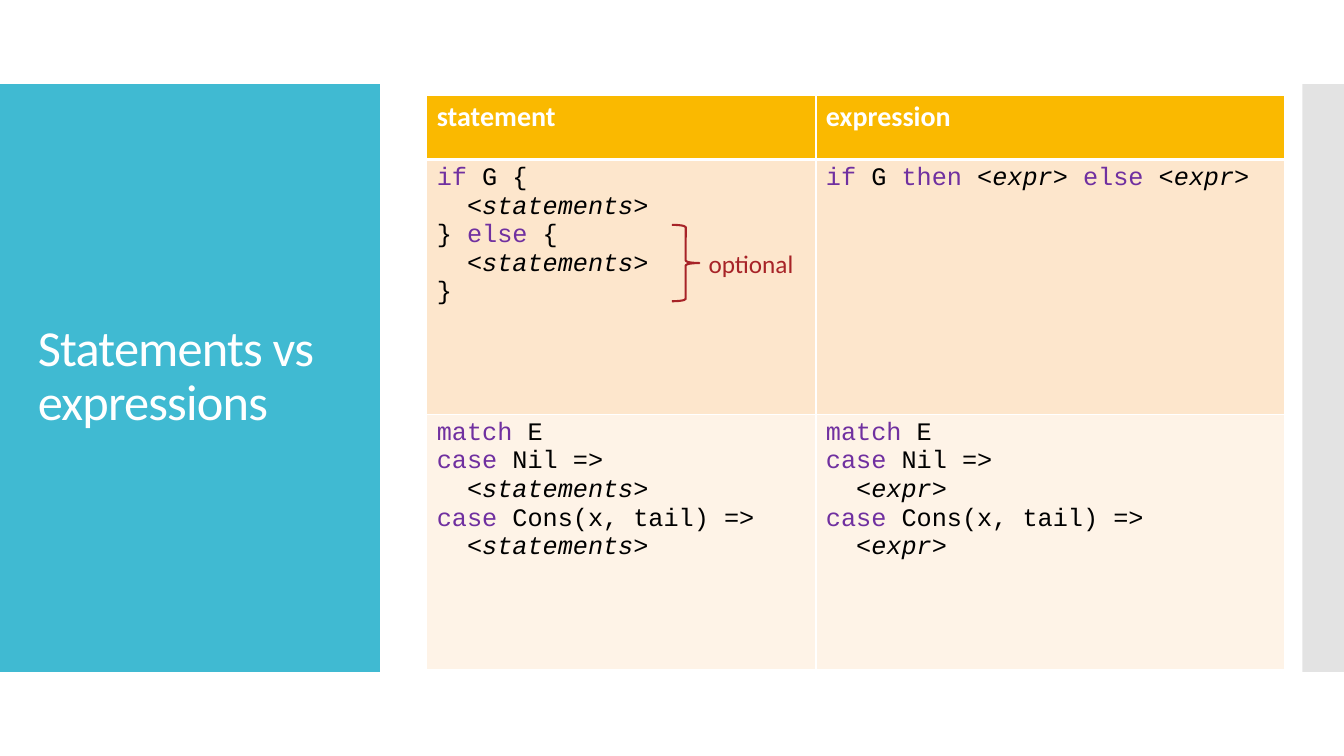
"""Build a slide that compares statements with expressions in a code table."""
from dataclasses import dataclass
from itertools import groupby

from lxml.etree import SubElement
from pptx import Presentation
from pptx.dml.color import RGBColor
from pptx.enum.shapes import MSO_SHAPE as Shape
from pptx.enum.text import MSO_ANCHOR as Anchor, MSO_AUTO_SIZE as AutoSize
from pptx.oxml import parse_xml
from pptx.oxml.ns import nsdecls, qn
from pptx.util import Pt


@dataclass(frozen=True)
class Theme:
    white: str = "FFFFFF"
    black: str = "000000"
    teal: str = "40BAD2"
    gray: str = "C8C8C8"
    amber: str = "FAB900"
    peach: str = "FDE6CC"
    cream: str = "FEF3E7"
    purple: str = "7030A0"
    red: str = "A72327"
    sans: str = "Calibri"
    mono: str = "Courier New"
    title_size: int = 36
    head_size: int = 20
    body_size: int = 18


theme = Theme()


def add_span(para, text, *, size=theme.body_size, font=theme.sans, color=theme.black, bold=False, italic=False):
    span = para.add_run()
    span.text = text
    span.font.size = Pt(size)
    span.font.name = font
    span.font.bold = bold
    span.font.italic = italic
    span.font.color.rgb = RGBColor.from_string(color)
    return span


def word_style(word):
    if word in KEYWORDS:
        return "keyword"
    return "slot" if word.startswith("<") else "plain"


KEYWORDS = {"if", "then", "else", "match", "case"}
STYLES = {
    "keyword": {"color": theme.purple},
    "slot": {"italic": True},
    "plain": {},
}
INDENT = 2 * 0.6 * theme.body_size
HEADINGS = ["statement", "expression"]
CODE = [
    [
        ["if G {", "<statements>", "} else {", "<statements>", "}"],
        ["if G then <expr> else <expr>"],
    ],
    [
        ["match E", "case Nil =>", slot, "case Cons(x, tail) =>", slot]
        for slot in ("<statements>", "<expr>")
    ],
]

deck = Presentation()
deck.slide_width, deck.slide_height = Pt(960), Pt(540)
page = deck.slides.add_slide(deck.slide_layouts[6])

for left, width, color in [(0, 271.4, theme.teal), (930.2, 29.8, theme.gray)]:
    panel = page.shapes.add_shape(Shape.RECTANGLE, Pt(left), Pt(60), Pt(width), Pt(420))
    panel.shadow.inherit = False
    panel.fill.solid()
    panel.fill.fore_color.rgb = RGBColor.from_string(color)
    panel.line.fill.background()
    if color == theme.gray:
        tint = panel.fill._xPr.find(".//" + qn("a:srgbClr"))
        SubElement(tint, qn("a:alpha"), val="50000")

title = page.shapes.add_textbox(Pt(20), Pt(88.5), Pt(232), Pt(362)).text_frame
title.word_wrap = True
title.vertical_anchor = Anchor.MIDDLE
para = title.paragraphs[0]
para.line_spacing = 0.9
span = add_span(para, "Statements vs expressions", size=theme.title_size, color=theme.white)
span.font._element.set("spc", "-60")

frame = page.shapes.add_table(3, 2, Pt(304.8), Pt(68), Pt(613), Pt(410))
table = frame.table
for column, width in zip(table.columns, (278, 335)):
    column.width = Pt(width)
for row, height in zip(table.rows, (46, 182, 182)):
    row.height = Pt(height)

for r, fill in enumerate((theme.amber, theme.peach, theme.cream)):
    for c in range(2):
        cell = table.cell(r, c)
        cell.fill.solid()
        cell.fill.fore_color.rgb = RGBColor.from_string(fill)
        weights = {"lnL": 1, "lnR": 1, "lnT": 3 if r == 1 else 1, "lnB": 3 if r == 0 else 1}
        for place, (edge, weight) in enumerate(weights.items()):
            border = parse_xml(
                f'<a:{edge} {nsdecls("a")} w="{Pt(weight)}"><a:solidFill>'
                f'<a:srgbClr val="{theme.white}"/></a:solidFill></a:{edge}>'
            )
            cell._tc.get_or_add_tcPr().insert(place, border)
        text = cell.text_frame
        if r == 0:
            add_span(text.paragraphs[0], HEADINGS[c], size=theme.head_size, color=theme.white, bold=True)
            continue
        for number, line in enumerate(CODE[r - 1][c]):
            para = text.add_paragraph() if number else text.paragraphs[0]
            if line.startswith("<"):
                para._p.get_or_add_pPr().set("marL", str(Pt(INDENT)))
            words = [word + " " for word in line.split()]
            words[-1] = words[-1].strip()
            for style, group in groupby(words, lambda word: word_style(word.strip())):
                add_span(para, "".join(group), font=theme.mono, **STYLES[style])

brace = page.shapes.add_shape(Shape.RIGHT_BRACE, Pt(480), Pt(160.6), Pt(19.6), Pt(54.6))
brace.shadow.inherit = False
brace.fill.background()
brace.line.color.rgb = RGBColor.from_string(theme.red)
brace.line.width = Pt(1.5)

note = page.shapes.add_textbox(Pt(499), Pt(173.5), Pt(85.7), Pt(29)).text_frame
note.word_wrap = True
note.auto_size = AutoSize.SHAPE_TO_FIT_TEXT
add_span(note.paragraphs[0], "optional", color=theme.red)

deck.save("out.pptx")
